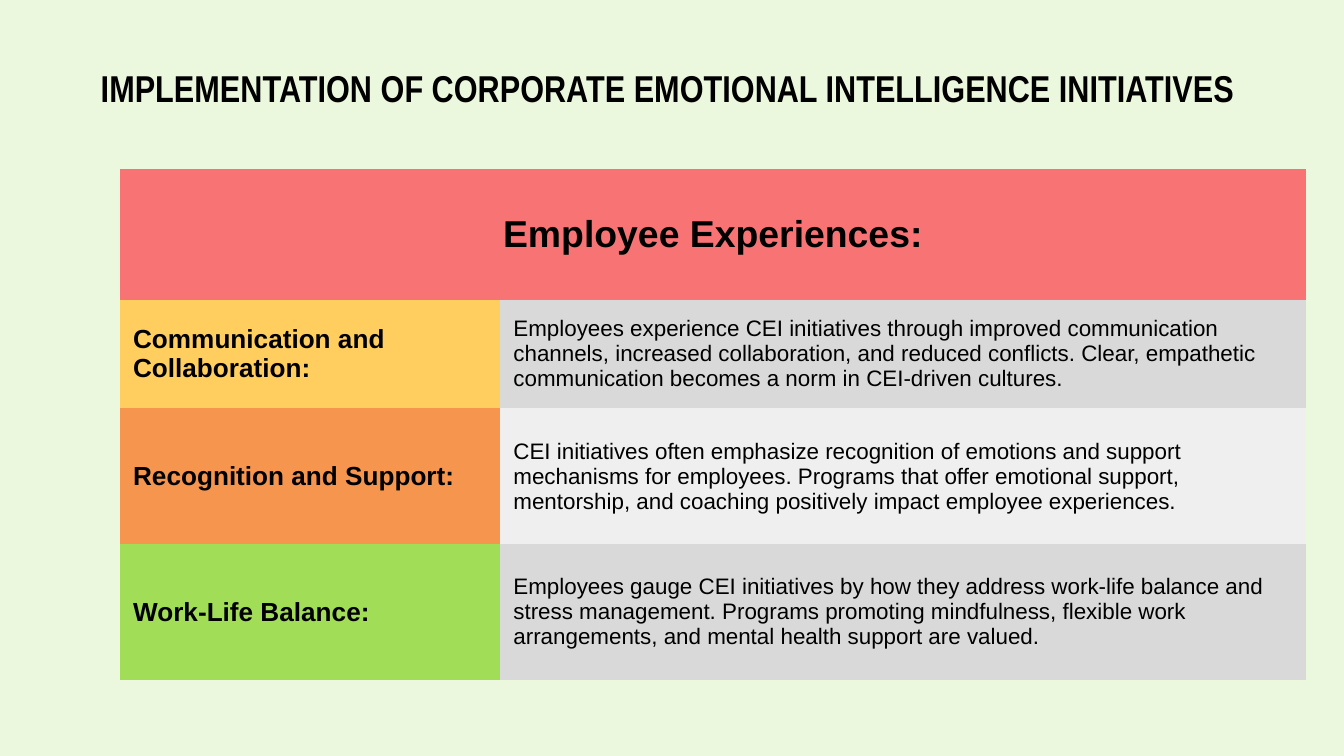
from pptx import Presentation
from pptx.dml.color import RGBColor
from pptx.enum.text import MSO_ANCHOR as Anchor, MSO_AUTO_SIZE as Fit, PP_ALIGN as Align
from pptx.oxml.ns import qn
from pptx.util import Inches, Pt

PLAIN = "{2D5ABB26-0587-4C30-8999-92F81FD0307C}"
WIDTH = Inches(10)
PAD = Inches(0.1)
COLS = [2.83, 6]
ROWS = [0.97, 0.81, 1.01, 1.01]
TITLE = "IMPLEMENTATION OF CORPORATE EMOTIONAL INTELLIGENCE INITIATIVES "
HEAD = "Employee Experiences:"
# Label, label fill, text, text fill
TOPICS = [
    ("Communication and Collaboration:", "FFCE5F",
     "Employees experience CEI initiatives through improved communication "
     "channels, increased collaboration, and reduced conflicts. Clear, "
     "empathetic communication becomes a norm in CEI-driven cultures.",
     "D9D9D9"),
    ("Recognition and Support:", "F6954E",
     "CEI initiatives often emphasize recognition of emotions and support "
     "mechanisms for employees. Programs that offer emotional support, "
     "mentorship, and coaching positively impact employee experiences.",
     "EFEFEF"),
    ("Work-Life Balance:", "A1DD56",
     "Employees gauge CEI initiatives by how they address work-life balance "
     "and stress management. Programs promoting mindfulness, flexible work "
     "arrangements, and mental health support are valued.",
     "D9D9D9"),
]


def paint(fill, color):
    fill.solid()
    fill.fore_color.rgb = RGBColor.from_string(color)


def write(frame, text, size, bold=True, align=Align.LEFT, face="Arial"):
    frame.text = text
    para = frame.paragraphs[0]
    para.alignment = align
    font = para.font
    font.name, font.size, font.bold = face, Pt(size), bold
    paint(font.fill, "000000")


def pad(box):
    """Set equal margins and middle anchoring on a text frame or a cell."""
    box.margin_left = box.margin_right = PAD
    box.margin_top = box.margin_bottom = PAD
    box.vertical_anchor = Anchor.MIDDLE


def add_title(slide):
    title = slide.shapes.title
    title.left, title.top = Inches(0.5), Inches(0.45)
    title.width, title.height = Inches(9), Inches(0.41)
    frame = title.text_frame
    pad(frame)
    frame.word_wrap = True
    frame.auto_size = Fit.NONE
    write(frame, TITLE, 20, align=Align.CENTER, face="Arial Narrow")


def fill_cell(cell, text, color, size, **style):
    pad(cell)
    paint(cell.fill, color)
    write(cell.text_frame, text, size, **style)


def add_grid(slide):
    frame = slide.shapes.add_table(
        len(ROWS), len(COLS), Inches(0.89), Inches(1.26),
        Inches(sum(COLS)), Inches(sum(ROWS)))
    table = frame.table
    table.first_row = table.horz_banding = False
    next(frame.element.iter(qn("a:tableStyleId"))).text = PLAIN
    for col, width in zip(table.columns, COLS):
        col.width = Inches(width)
    for row, height in zip(table.rows, ROWS):
        row.height = Inches(height)

    head = table.cell(0, 0)
    head.merge(table.cell(0, 1))
    fill_cell(head, HEAD, "F87374", 20, align=Align.CENTER)
    for row, (label, tint, text, shade) in enumerate(TOPICS, 1):
        fill_cell(table.cell(row, 0), label, tint, 14)
        fill_cell(table.cell(row, 1), text, shade, 12, bold=False)


def main():
    deck = Presentation()
    deck.slide_width, deck.slide_height = WIDTH, WIDTH * 9 // 16
    slide = deck.slides.add_slide(deck.slide_layouts.get_by_name("Title Only"))
    paint(slide.background.fill, "ECF8DD")
    add_title(slide)
    add_grid(slide)
    deck.save("out.pptx")


if __name__ == "__main__":
    main()
